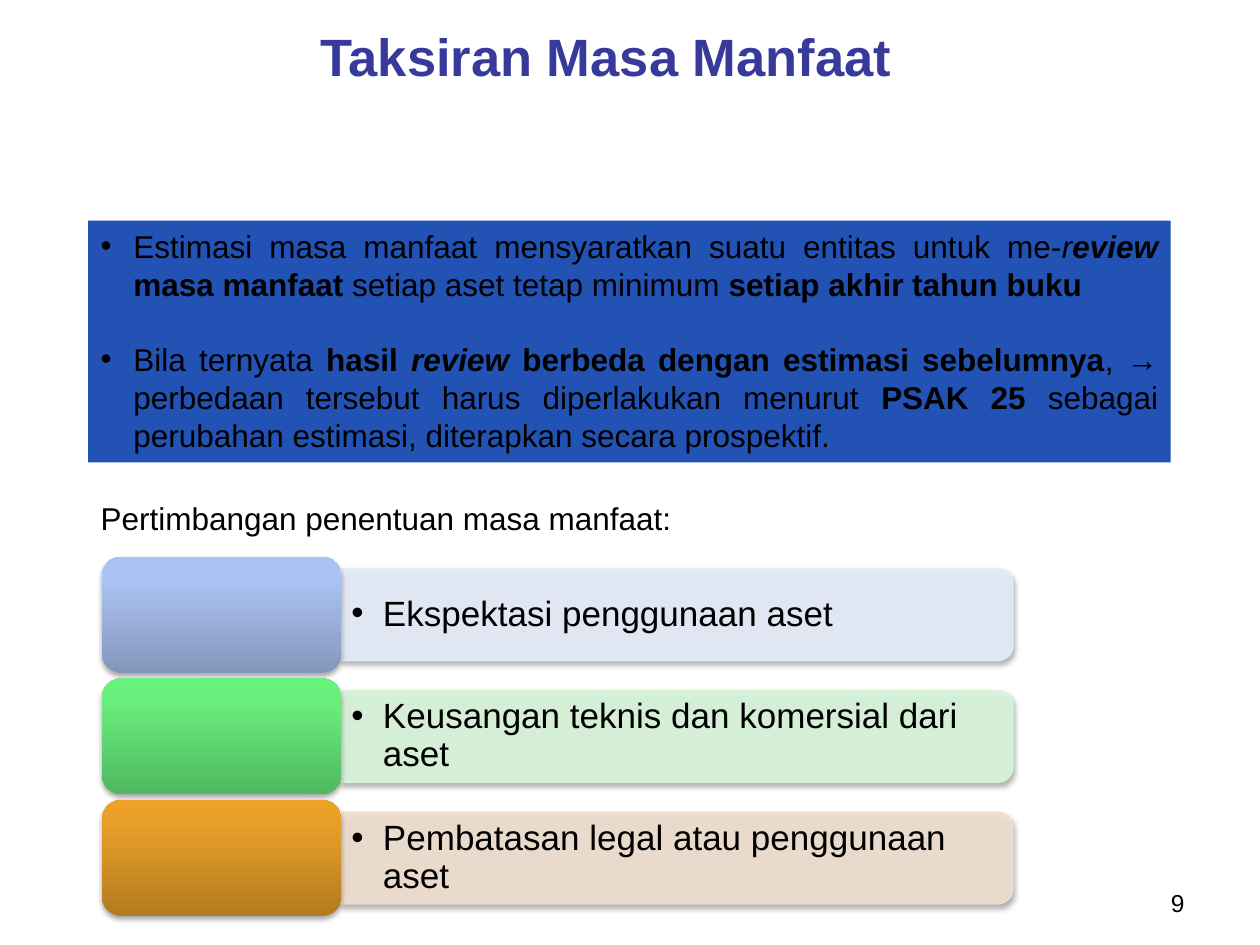
from lxml import etree
from pptx import Presentation
from pptx.dml.color import RGBColor
from pptx.enum.shapes import MSO_SHAPE
from pptx.enum.text import MSO_ANCHOR, PP_ALIGN
from pptx.oxml.ns import qn
from pptx.util import Inches, Pt

RECT, ROUNDED = MSO_SHAPE.RECTANGLE, MSO_SHAPE.ROUNDED_RECTANGLE
ROUNDED_TOP = MSO_SHAPE.ROUND_2_SAME_RECTANGLE
LEFT, CENTER, RIGHT, JUSTIFY = (
    PP_ALIGN.LEFT, PP_ALIGN.CENTER, PP_ALIGN.RIGHT, PP_ALIGN.JUSTIFY)
TOP, MIDDLE = MSO_ANCHOR.TOP, MSO_ANCHOR.MIDDLE

FONT = "Arial"
COLORS = {"title": "37399B", "text": "000000", "panel": "2152B4", "shadow": "000000"}

# Bar colour, then tab gradient from bottom to top
FACTORS = [
    ("Ekspektasi penggunaan aset", "E6ECFA", ("8496BB", "ABC3F3", "AAC3F5")),
    ("Keusangan teknis dan komersial dari aset", "DAF6DC", ("51B760", "69EE7C", "67F27B")),
    ("Pembatasan legal atau penggunaan aset", "F1DFCF", ("B37B1F", "E89F29", "EDA125")),
]

# Each run: text and its style, b for bold and i for italic
ESTIMATE_RULES = [
    [("Estimasi masa manfaat mensyaratkan suatu entitas untuk me-", ""),
     ("r", "i"), ("eview ", "bi"), ("masa manfaat", "b"),
     (" setiap aset tetap minimum ", ""), ("setiap akhir tahun buku ", "b")],
    [("Bila ternyata ", ""), ("hasil ", "b"), ("review ", "bi"),
     ("berbeda dengan estimasi sebelumnya", "b"),
     (", → perbedaan tersebut harus diperlakukan menurut ", ""),
     ("PSAK 25 ", "b"),
     ("sebagai perubahan estimasi, diterapkan secara prospektif.", "")],
]


def add_child(parent, tag, **attributes):
    child = etree.SubElement(parent, qn(tag))
    for name, value in attributes.items():
        child.set(name, str(value))
    return child


def add_bullet(paragraph, indent):
    properties = paragraph._p.get_or_add_pPr()
    properties.set("marL", str(Inches(indent)))
    properties.set("indent", str(-Inches(indent)))
    add_child(properties, "a:buFont", typeface=FONT)
    add_child(properties, "a:buChar", char="•")


def add_runs(paragraph, runs, size, color=COLORS["text"]):
    for text, style in runs:
        run = paragraph.add_run()
        run.text = text
        font = run.font
        font.name, font.size = FONT, Pt(size)
        font.bold, font.italic = "b" in style, "i" in style
        font.color.rgb = RGBColor.from_string(color)


def prepare_frame(shape, anchor, margins=(0.1, 0.05)):
    frame = shape.text_frame
    frame.word_wrap = True
    frame.vertical_anchor = anchor
    frame.margin_left = frame.margin_right = Inches(margins[0])
    frame.margin_top = frame.margin_bottom = Inches(margins[1])
    return frame


def add_label(slide, box, text, size, align=LEFT, anchor=TOP, style="", color=COLORS["text"]):
    label = slide.shapes.add_textbox(*map(Inches, box))
    paragraph = prepare_frame(label, anchor).paragraphs[0]
    paragraph.alignment = align
    add_runs(paragraph, [(text, style)], size, color)


def add_drop_shadow(shape):
    shape.shadow.inherit = False
    effects = shape._element.spPr.find(qn("a:effectLst"))
    shadow = add_child(effects, "a:outerShdw", blurRad=Pt(3.1), dist=Pt(1.8),
                       dir=5400000, rotWithShape=0)
    color = add_child(shadow, "a:srgbClr", val=COLORS["shadow"])
    add_child(color, "a:alpha", val=35000)


def set_translucent(fill, color):
    fill.solid()
    fill.fore_color.rgb = RGBColor.from_string(color)
    for node in fill._xPr.iter(qn("a:srgbClr")):
        add_child(node, "a:alpha", val=90000)


def set_gradient(shape, colors):
    shape.fill.gradient()
    shape.fill.gradient_angle = 90
    stops = shape._element.spPr.find(qn("a:gradFill")).find(qn("a:gsLst"))
    for stop in list(stops):
        stops.remove(stop)
    for percent, color in zip((0, 80, 100), colors):
        stop = add_child(stops, "a:gs", pos=percent * 1000)
        add_child(stop, "a:srgbClr", val=color)


def add_rules_panel(slide, box):
    panel = slide.shapes.add_shape(RECT, *map(Inches, box))
    panel.shadow.inherit = False
    panel.fill.solid()
    panel.fill.fore_color.rgb = RGBColor.from_string(COLORS["panel"])
    panel.line.fill.background()
    frame = prepare_frame(panel, TOP)
    for index, runs in enumerate(ESTIMATE_RULES):
        paragraph = frame.add_paragraph() if index else frame.paragraphs[0]
        paragraph.alignment = JUSTIFY
        if index:
            paragraph.space_before = Pt(21.5)
        add_bullet(paragraph, 0.26)
        add_runs(paragraph, runs, 18)


def add_factor_row(slide, box, text, bar_color, tab_colors):
    """Place a tab on the left and a bar, rounded on its right, beside it."""
    left, top, width, height = box
    tab_width, bar_height, text_height = 1.9, 0.73, 0.66
    bar_left, bar_width = left + tab_width, width - tab_width
    middle = top + height / 2

    # Turned a quarter, so its rounded top faces right
    bar = slide.shapes.add_shape(
        ROUNDED_TOP,
        Inches(bar_left + (bar_width - bar_height) / 2), Inches(middle - bar_width / 2),
        Inches(bar_height), Inches(bar_width))
    bar.rotation = 90
    set_translucent(bar.fill, bar_color)
    set_translucent(bar.line.fill, bar_color)
    bar.line.width = Pt(0.75)
    add_drop_shadow(bar)

    label = slide.shapes.add_textbox(
        Inches(bar_left), Inches(middle - text_height / 2),
        Inches(bar_width - 0.03), Inches(text_height))
    paragraph = prepare_frame(label, MIDDLE, (0.08, 0.04)).paragraphs[0]
    paragraph.line_spacing = 0.9
    add_bullet(paragraph, 0.25)
    add_runs(paragraph, [(text, "")], 20)

    tab = slide.shapes.add_shape(
        ROUNDED, Inches(left), Inches(top), Inches(tab_width), Inches(height))
    set_gradient(tab, tab_colors)
    tab.line.fill.background()
    add_drop_shadow(tab)


def add_factor_list(slide, box):
    left, top, width, height = box
    row_height = 0.92
    pitch = (height - row_height) / (len(FACTORS) - 1)
    for index, factor in enumerate(FACTORS):
        add_factor_row(slide, (left, top + index * pitch, width, row_height), *factor)


def main():
    presentation = Presentation()
    presentation.slide_width, presentation.slide_height = Inches(10), Inches(7.5)
    slide = presentation.slides.add_slide(presentation.slide_layouts[6])
    add_label(slide, (0.31, 0.13, 9, 0.62), "Taksiran Masa Manfaat", 30,
              CENTER, MIDDLE, "b", COLORS["title"])
    add_label(slide, (7.17, 7, 2.33, 0.35), "9", 14, RIGHT)
    add_rules_panel(slide, (0.7, 1.75, 8.59, 1.92))
    add_label(slide, (0.7, 3.91, 5.08, 0.4), "Pertimbangan penentuan masa manfaat:", 18)
    add_factor_list(slide, (0.81, 4.42, 7.23, 2.85))
    presentation.save("out.pptx")


if __name__ == "__main__":
    main()
